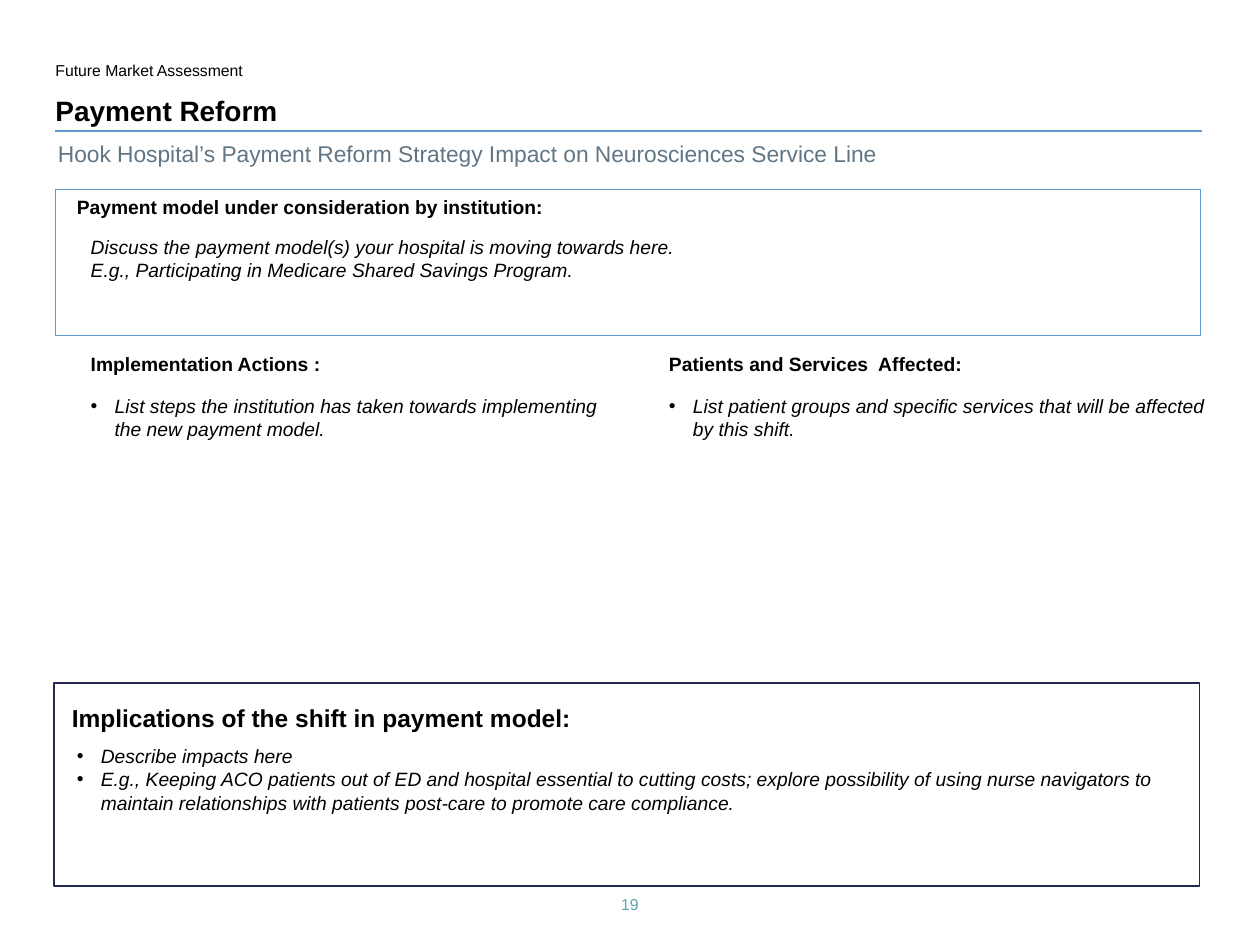
from lxml import etree
from pptx import Presentation
from pptx.dml.color import RGBColor
from pptx.enum.shapes import MSO_CONNECTOR, MSO_SHAPE
from pptx.enum.text import MSO_ANCHOR, MSO_AUTO_SIZE, PP_ALIGN
from pptx.oxml.ns import qn
from pptx.util import Inches, Pt

RECTANGLE, STRAIGHT = MSO_SHAPE.RECTANGLE, MSO_CONNECTOR.STRAIGHT
TOP, BOTTOM = MSO_ANCHOR.TOP, MSO_ANCHOR.BOTTOM
LEFT_ALIGN, CENTER = PP_ALIGN.LEFT, PP_ALIGN.CENTER
NO_RESIZE = MSO_AUTO_SIZE.NONE

BLACK = RGBColor(0x00, 0x00, 0x00)
WHITE = RGBColor(0xFF, 0xFF, 0xFF)
RULE_BLUE = RGBColor(0x5D, 0x9A, 0xCF)
FRAME_BLUE = RGBColor(0x62, 0x9D, 0xD1)
NAVY = RGBColor(0x24, 0x28, 0x52)
SLATE = RGBColor(0x61, 0x76, 0x85)
TEAL = RGBColor(0x5A, 0xA2, 0xAE)

MARGIN, CONTENT_WIDTH = 0.44, 9.09
INDENT = 0.67
COLUMN_STEP, COLUMN_WIDTH = 4.59, 4.37
BULLET_INDENT = Inches(0.19)

deck = Presentation()
deck.slide_width, deck.slide_height = Inches(10), Inches(7.5)
page = deck.slides.add_slide(deck.slide_layouts[5])


def write(box, lines, size, color=BLACK, bold=False, italic=False, bullets=False,
          inset=(0.05, 0.05), anchor=TOP, align=LEFT_ALIGN):
    frame = box.text_frame
    frame.word_wrap = True
    frame.auto_size = NO_RESIZE
    frame.vertical_anchor = anchor
    frame.margin_left = frame.margin_right = Inches(inset[0])
    frame.margin_top = frame.margin_bottom = Inches(inset[1])
    frame.text = "\n".join(lines)
    for paragraph in frame.paragraphs:
        paragraph.alignment = align
        for span in paragraph.runs:
            span.font.name, span.font.size = "Arial", Pt(size)
            span.font.bold, span.font.italic = bold, italic
            span.font.color.rgb = color
        if bullets:
            properties = paragraph._p.get_or_add_pPr()
            properties.set("marL", str(BULLET_INDENT))
            properties.set("indent", str(-BULLET_INDENT))
            etree.SubElement(properties, qn("a:buFont")).set("typeface", "Arial")
            etree.SubElement(properties, qn("a:buChar")).set("char", "•")


def add_text(left, top, width, height, lines, size, **style):
    box = page.shapes.add_textbox(*map(Inches, (left, top, width, height)))
    write(box, lines, size, **style)


# Header
title = page.shapes.title
title.left, title.top = Inches(MARGIN), Inches(0.74)
title.width, title.height = Inches(CONTENT_WIDTH), Inches(0.27)
write(title, ["Payment Reform"], 16, bold=True, inset=(0, 0), anchor=BOTTOM)

rule = page.shapes.add_connector(
    STRAIGHT, Inches(MARGIN), Inches(1.04), Inches(9.54), Inches(1.04))
rule.line.color.rgb, rule.line.width = RULE_BLUE, Pt(0.75)
etree.SubElement(rule._element.spPr, qn("a:effectLst"))

add_text(MARGIN, 0.44, 2.89, 0.2, ["Future Market Assessment"], 9, inset=(0, 0.04))
add_text(0.46, 1.07, CONTENT_WIDTH, 0.3,
         ["Hook Hospital’s Payment Reform Strategy Impact on Neurosciences Service Line"],
         13, color=SLATE, inset=(0, 0.04))

# Frames for the payment model and its implications
for left, top, height, color, weight in [
    (MARGIN, 1.5, 1.16, FRAME_BLUE, 0.5),
    (0.43, 5.42, 1.61, NAVY, 1),
]:
    frame_box = page.shapes.add_shape(
        RECTANGLE, *map(Inches, (left, top, CONTENT_WIDTH, height)))
    frame_box.shadow.inherit = False
    frame_box.fill.solid()
    frame_box.fill.fore_color.rgb = WHITE
    frame_box.line.color.rgb, frame_box.line.width = color, Pt(weight)

# Payment model
add_text(0.56, 1.5, 4.86, 0.29, ["Payment model under consideration by institution:"],
         11, bold=True)
add_text(INDENT, 1.82, 8.75, 0.86,
         ["Discuss the payment model(s) your hospital is moving towards here.",
          "E.g., Participating in Medicare Shared Savings Program."],
         11, italic=True)

# Two columns
columns = [
    ("Implementation Actions :",
     "List steps the institution has taken towards implementing the new payment model."),
    ("Patients and Services  Affected:",
     "List patient groups and specific services that will be affected by this shift."),
]
for index, (heading, advice) in enumerate(columns):
    left = INDENT + index * COLUMN_STEP
    add_text(left, 2.75, 3, 0.29, [heading], 11, bold=True)
    add_text(left, 3.08, COLUMN_WIDTH, 0.84, [advice], 11, italic=True, bullets=True)

# Implications
add_text(0.43, 5.51, 8.46, 0.38, ["Implications of the shift in payment model:"],
         14, bold=True, inset=(0.14, 0.07))
add_text(0.56, 5.86, 8.7, 1.21,
         ["Describe impacts here",
          "E.g., Keeping ACO patients out of ED and hospital essential to cutting costs; "
          "explore possibility of using nurse navigators to maintain relationships with "
          "patients post-care to promote care compliance."],
         11, italic=True, bullets=True)

# Page number
add_text(4.66, 7.06, 0.68, 0.26, ["19"], 9, color=TEAL, inset=(0.04, 0.04), align=CENTER)

deck.save("out.pptx")
